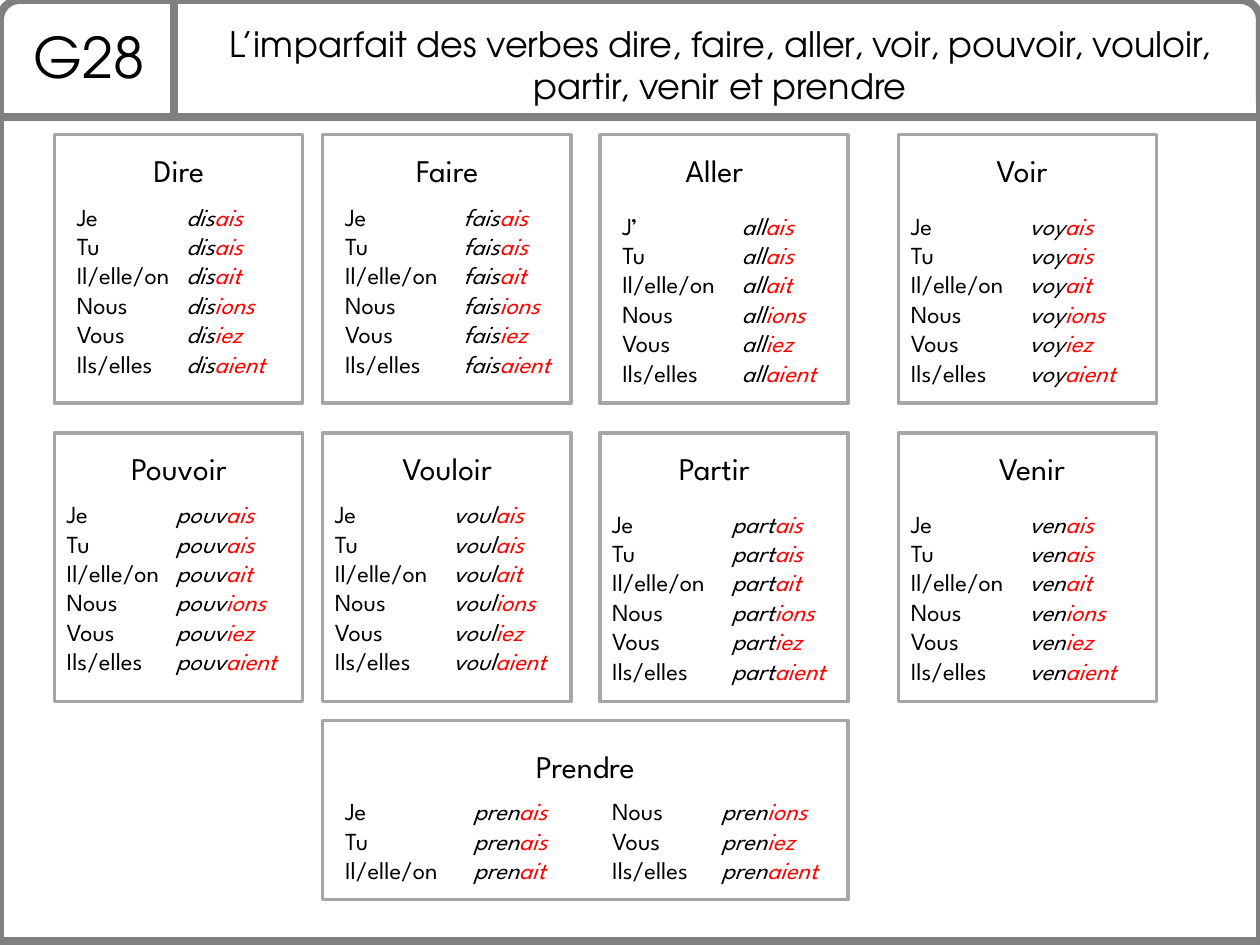
from lxml import etree
from pptx import Presentation
from pptx.dml.color import RGBColor
from pptx.enum import shapes, text
from pptx.oxml.ns import qn
from pptx.util import Pt

HEAD_FONT = "TeX Gyre Adventor"
BODY_FONT = "League Spartan"
BLACK, WHITE, RED = "000000", "FFFFFF", "FF0000"
FRAME, CARD = "808080", "A6A6A6"
PRONOUNS = ["Je", "Tu", "Il/elle/on", "Nous", "Vous", "Ils/elles"]
ENDINGS = ["ais", "ais", "ait", "ions", "iez", "aient"]
COLUMNS = [(31, 142), (184.3, 142), (342.7, 142), (513.4, 147.6)]
ROWS = [77, 247.5]
CARD_H = 153.4
TITLE_W, PRONOUN_W, VERB_W = 108, 79, 85
LINE_H, INSET_H = 16.9, 7.2

# title x, pronoun x, verb x and list y, all inside the card
VERBS = [
    [("Dire", "dis", 17.3, 5.8, 68.4, 34.6),
     ("Faire", "fais", 17.3, 5.8, 73.4, 34.6),
     ("Aller", "all", 11.5, 5.8, 74.2, 39.8),
     ("Voir", "voy", 16.6, 0, 67.7, 39.8)],
    [("Pouvoir", "pouv", 17.3, 0, 62.6, 34.2),
     ("Vouloir", "voul", 17.3, 0, 67.7, 34.2),
     ("Partir", "part", 11.5, 0, 68.4, 39.6),
     ("Venir", "ven", 22.3, 0, 67.7, 39.6)],
]


def rgb(value):
    return RGBColor.from_string(value)


def add_box(s, kind, x, y, w, h, line, weight):
    sp = s.shapes.add_shape(kind, Pt(x), Pt(y), Pt(w), Pt(h))
    sp.shadow.inherit = False
    sp.fill.solid()
    sp.fill.fore_color.rgb = rgb(WHITE)
    sp.line.color.rgb = rgb(line)
    sp.line.width = Pt(weight)


def add_text(s, x, y, w, h, lines, size, font, align=None, italic=None):
    tf = s.shapes.add_textbox(Pt(x), Pt(y), Pt(w), Pt(h)).text_frame
    tf.word_wrap = True
    tf.auto_size = text.MSO_AUTO_SIZE.SHAPE_TO_FIT_TEXT
    for i, parts in enumerate(lines):
        p = tf.paragraphs[0] if i == 0 else tf.add_paragraph()
        p.alignment = align
        for content, color in parts:
            r = p.add_run()
            r.text = content
            r.font.size = Pt(size)
            r.font.name = font
            r.font.italic = italic
            r.font.color.rgb = rgb(color)


def add_heading(s, x, y, w, h, content, size, font):
    add_text(s, x, y, w, h, [[(content, BLACK)]], size, font,
             text.PP_ALIGN.CENTER)


def add_conjugation(s, x, y, verb_dx, pronouns, stem, endings):
    h = LINE_H * len(pronouns) + INSET_H
    add_text(s, x, y, PRONOUN_W, h, [[(p, BLACK)] for p in pronouns],
             14, BODY_FONT)
    add_text(s, x + verb_dx, y, VERB_W, h,
             [[(stem, BLACK), (e, RED)] for e in endings],
             14, BODY_FONT, italic=True)


def add_header(s, x, y, w, h):
    add_box(s, shapes.MSO_SHAPE.ROUND_2_SAME_RECTANGLE, x, y, w, h, FRAME, 4.5)
    add_box(s, shapes.MSO_SHAPE.RECTANGLE, x, y + h, w, 471, FRAME, 4.5)
    divider = s.shapes.add_connector(shapes.MSO_CONNECTOR.STRAIGHT,
                                     Pt(x + 99.4), Pt(y), Pt(x + 99.4), Pt(y + h))
    divider.line.color.rgb = rgb(FRAME)
    divider.line.width = Pt(4.5)
    etree.SubElement(divider._element.spPr, qn("a:effectLst"))
    add_heading(s, x + 8.6, y + 9.4, 85, 46, "G28", 32, HEAD_FONT)
    add_heading(s, x + 110.9, y + 9.4, 601.2, 55.4,
                "L’imparfait des verbes dire, faire, aller, voir, pouvoir, "
                "vouloir, partir, venir et prendre", 20, HEAD_FONT)


def add_verb_card(s, x, y, w, h, verb):
    name, stem, title_x, pronoun_x, verb_x, list_y = verb
    pronouns = ["J’"] + PRONOUNS[1:] if name == "Aller" else PRONOUNS
    add_box(s, shapes.MSO_SHAPE.RECTANGLE, x, y, w, h, CARD, 2)
    add_heading(s, x + title_x, y + 5.6, TITLE_W, 29, name, 18, BODY_FONT)
    add_conjugation(s, x + pronoun_x, y + list_y, verb_x - pronoun_x,
                    pronouns, stem, ENDINGS)


def add_wide_card(s, x, y, w, h):
    add_box(s, shapes.MSO_SHAPE.RECTANGLE, x, y, w, h, CARD, 2)
    add_heading(s, x + (w - TITLE_W) / 2, y + 11.5, TITLE_W, 29,
                "Prendre", 18, BODY_FONT)
    for start, dx, verb_dx in [(0, 5.8, 73.4), (3, 158.4, 62.6)]:
        part = slice(start, start + 3)
        add_conjugation(s, x + dx, y + 39.6, verb_dx,
                        PRONOUNS[part], "pren", ENDINGS[part])


def main():
    prs = Presentation()
    prs.slide_width, prs.slide_height = Pt(720), Pt(540)
    s = prs.slides.add_slide(prs.slide_layouts[6])
    add_header(s, 0, 0, 720, 67)
    for y, verbs in zip(ROWS, VERBS):
        for (x, w), verb in zip(COLUMNS, verbs):
            add_verb_card(s, x, y, w, CARD_H, verb)
    add_wide_card(s, COLUMNS[1][0], 411.8, 300.4, 102.2)
    prs.save("out.pptx")


if __name__ == "__main__":
    main()
